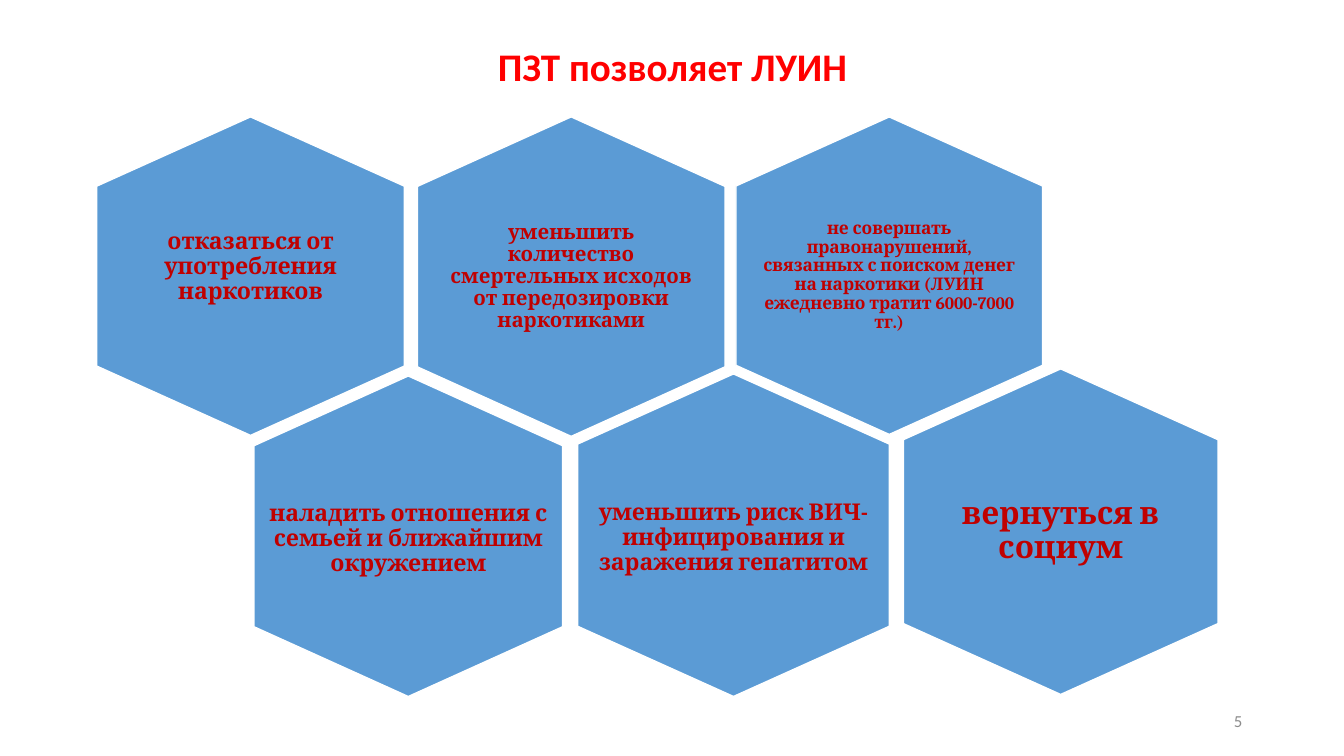
from dataclasses import dataclass

from pptx import Presentation
from pptx.dml.color import RGBColor
from pptx.enum.text import MSO_ANCHOR, PP_ALIGN
from pptx.util import Inches, Pt


@dataclass(frozen=True)
class Theme:
    heading_font: str = "Calibri"
    benefit_font: str = "Cambria"
    title: RGBColor = RGBColor(0xFF, 0x00, 0x00)
    benefit: RGBColor = RGBColor(0xC0, 0x00, 0x00)
    hexagon: RGBColor = RGBColor(0x5B, 0x9B, 0xD5)
    outline: RGBColor = RGBColor(0xFF, 0xFF, 0xFF)
    page_number: RGBColor = RGBColor(0x8C, 0x8C, 0x8C)
    title_size: float = 27.9
    page_number_size: float = 12
    small: float = 12.4
    medium: float = 14.6
    regular: float = 16.5
    large: float = 22.5


THEME = Theme()
SHOULDER = 0.2175  # height of a hexagon's slanted part, as a share of its height

# text, size, box (left, top, width, height), side inset, upward shift of the text
BENEFITS = [
    ("отказаться от употребления наркотиков",
     THEME.regular, (0.96, 1.16, 3.05, 3.16), 0.21, 0.09),
    ("уменьшить количество смертельных исходов от передозировки наркотиками",
     THEME.medium, (4.14, 1.16, 3.05, 3.17), 0.26, 0),
    ("не совершать правонарушений, связанных с поиском денег на наркотики "
     "(ЛУИН ежедневно тратит 6000-7000 тг.)",
     THEME.small, (7.3, 1.16, 3.04, 3.15), 0.26, 0),
    ("наладить отношения с семьей и ближайшим окружением",
     THEME.regular, (2.52, 3.73, 3.06, 3.18), 0.14, -0.03),
    ("уменьшить риск ВИЧ-инфицирования и заражения гепатитом",
     THEME.regular, (5.73, 3.71, 3.09, 3.2), 0.15, -0.03),
    ("вернуться в социум",
     THEME.large, (8.96, 3.66, 3.12, 3.23), 0.26, 0),
]


def write(frame, text, font, size, color, align, bold=False, line_spacing=None):
    frame.text = text
    frame.word_wrap = True
    frame.vertical_anchor = MSO_ANCHOR.MIDDLE
    paragraph = frame.paragraphs[0]
    paragraph.alignment = align
    paragraph.line_spacing = line_spacing
    for run in paragraph.runs:
        run.font.name = font
        run.font.size = Pt(size)
        run.font.bold = bold
        run.font.color.rgb = color


def add_title(slide, text, box):
    title = slide.shapes.title
    title.left, title.top, title.width, title.height = map(Inches, box)
    write(title.text_frame, text, THEME.heading_font, THEME.title_size,
          THEME.title, PP_ALIGN.CENTER, bold=True, line_spacing=0.9)


def add_benefit(slide, text, size, box, side_inset, shift):
    """Draw a pointed-top hexagon that fills the box, with its text inside."""
    left, top, width, height = box
    middle, right, bottom = left + width / 2, left + width, top + height
    upper, lower = top + SHOULDER * height, bottom - SHOULDER * height
    corners = [(right, upper), (right, lower), (middle, bottom),
               (left, lower), (left, upper)]
    builder = slide.shapes.build_freeform(Inches(middle), Inches(top))
    builder.add_line_segments([(Inches(x), Inches(y)) for x, y in corners])
    hexagon = builder.convert_to_shape()
    hexagon.shadow.inherit = False
    hexagon.fill.solid()
    hexagon.fill.fore_color.rgb = THEME.hexagon
    hexagon.line.color.rgb = THEME.outline
    hexagon.line.width = Pt(1)

    frame = hexagon.text_frame
    frame.margin_left = frame.margin_right = Inches(side_inset)
    frame.margin_top = Inches(0.29 - shift)
    frame.margin_bottom = Inches(0.29 + shift)
    write(frame, text, THEME.benefit_font, size, THEME.benefit,
          PP_ALIGN.CENTER, bold=True, line_spacing=0.9)


def add_page_number(slide, number, box):
    page_number = slide.shapes.add_textbox(*map(Inches, box))
    write(page_number.text_frame, str(number), THEME.heading_font,
          THEME.page_number_size, THEME.page_number, PP_ALIGN.RIGHT)


def main():
    deck = Presentation()
    deck.slide_width, deck.slide_height = Inches(13.33), Inches(7.5)
    slide = deck.slides.add_slide(deck.slide_layouts.get_by_name("Title Only"))
    add_title(slide, "ПЗТ позволяет ЛУИН", (0.92, 0.4, 11.5, 0.56))
    for benefit in BENEFITS:
        add_benefit(slide, *benefit)
    add_page_number(slide, 5, (9.42, 6.95, 3, 0.4))
    deck.save("out.pptx")


if __name__ == "__main__":
    main()
